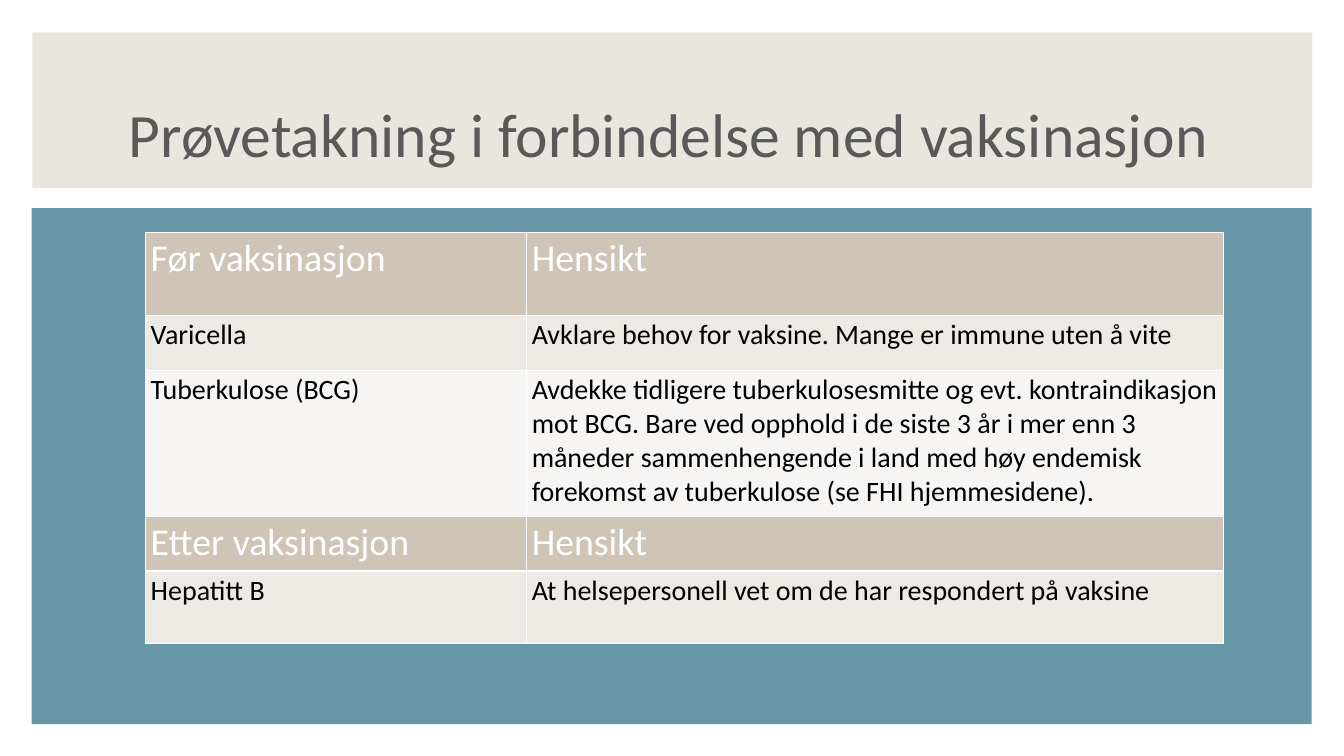
from lxml import etree
from pptx import Presentation
from pptx.dml.color import RGBColor
from pptx.enum.shapes import MSO_SHAPE
from pptx.enum.text import MSO_ANCHOR
from pptx.oxml.ns import qn
from pptx.util import Cm, Pt

RECTANGLE = MSO_SHAPE.RECTANGLE
BOTTOM = MSO_ANCHOR.BOTTOM

WHITE = RGBColor(0xFF, 0xFF, 0xFF)
BLACK = RGBColor(0x00, 0x00, 0x00)
GREY = RGBColor(0x59, 0x59, 0x59)
TEAL = RGBColor(0x67, 0x96, 0xA7)
CREAM = RGBColor(0xE9, 0xE6, 0xDF)
HEADER_FILL = RGBColor(0xCF, 0xC4, 0xB6)
BAND_FILLS = [RGBColor(0xED, 0xEA, 0xE5), RGBColor(0xF6, 0xF5, 0xF3)]

FONT = "Calibri"
TABLE_LEFT = Cm(7.34)
COLUMN_WIDTHS = [Cm(19.2), Cm(35.1)]

BEFORE_VACCINATION = [
    ("Før vaksinasjon", "Hensikt"),
    ("Varicella", "Avklare behov for vaksine. Mange er immune uten å vite"),
    ("Tuberkulose (BCG)",
     "Avdekke tidligere tuberkulosesmitte og evt. kontraindikasjon mot BCG. "
     "Bare ved opphold i de siste 3 år i mer enn 3 måneder sammenhengende i land "
     "med høy endemisk forekomst av tuberkulose (se FHI hjemmesidene)."),
]
AFTER_VACCINATION = [
    ("Etter vaksinasjon", "Hensikt"),
    ("Hepatitt B", "At helsepersonell vet om de har respondert på vaksine"),
]


def add_borders(cell, bottom_width):
    """Draw white cell borders, 1 pt except for the bottom one."""
    properties = cell._tc.get_or_add_tcPr()
    for side, width in (("L", 1), ("R", 1), ("T", 1), ("B", bottom_width)):
        line = etree.SubElement(properties, qn(f"a:ln{side}"), w=str(Pt(width)))
        fill = etree.SubElement(line, qn("a:solidFill"))
        etree.SubElement(fill, qn("a:srgbClr"), val=str(WHITE))


def set_font(paragraph, size, color):
    font = paragraph.runs[0].font
    font.name = FONT
    font.size = Pt(size)
    font.color.rgb = color


presentation = Presentation()
presentation.slide_width = Cm(67.72)
presentation.slide_height = Cm(38.1)
slide = presentation.slides.add_slide(presentation.slide_layouts[6])

# Background panels
for left, top, height, color in ((1.6, 10.49, 26.01, TEAL), (1.63, 1.63, 7.85, CREAM)):
    panel = slide.shapes.add_shape(RECTANGLE, Cm(left), Cm(top), Cm(64.49), Cm(height))
    panel.shadow.inherit = False
    panel.fill.solid()
    panel.fill.fore_color.rgb = color
    panel.line.fill.background()

# Title
title = slide.shapes.add_textbox(Cm(6.5), Cm(4.78), Cm(55.88), Cm(3.76)).text_frame
title.word_wrap = True
title.vertical_anchor = BOTTOM
title.margin_left = title.margin_right = title.margin_top = title.margin_bottom = 0
title.text = "Prøvetakning i forbindelse med vaksinasjon"
set_font(title.paragraphs[0], 88, GREY)

# Sampling before and after vaccination; the second table covers the end of the first
for top, row_heights, content in (
    (11.73, (4.17, 2.74, 8.71), BEFORE_VACCINATION),
    (26.04, (2.74, 3.63), AFTER_VACCINATION),
):
    table = slide.shapes.add_table(
        len(content), len(COLUMN_WIDTHS), TABLE_LEFT, Cm(top),
        sum(COLUMN_WIDTHS), Cm(sum(row_heights))).table
    for column, width in zip(table.columns, COLUMN_WIDTHS):
        column.width = width
    for r, (height, texts) in enumerate(zip(row_heights, content)):
        table.rows[r].height = Cm(height)
        is_header = r == 0
        for c, text in enumerate(texts):
            cell = table.cell(r, c)
            add_borders(cell, 3 if is_header else 1)
            cell.fill.solid()
            cell.fill.fore_color.rgb = HEADER_FILL if is_header else BAND_FILLS[r - 1]
            cell.text_frame.text = text
            paragraph = cell.text_frame.paragraphs[0]
            set_font(paragraph, 54 if is_header else 40, WHITE if is_header else BLACK)
            paragraph.runs[0].font.bold = False

presentation.save("out.pptx")
